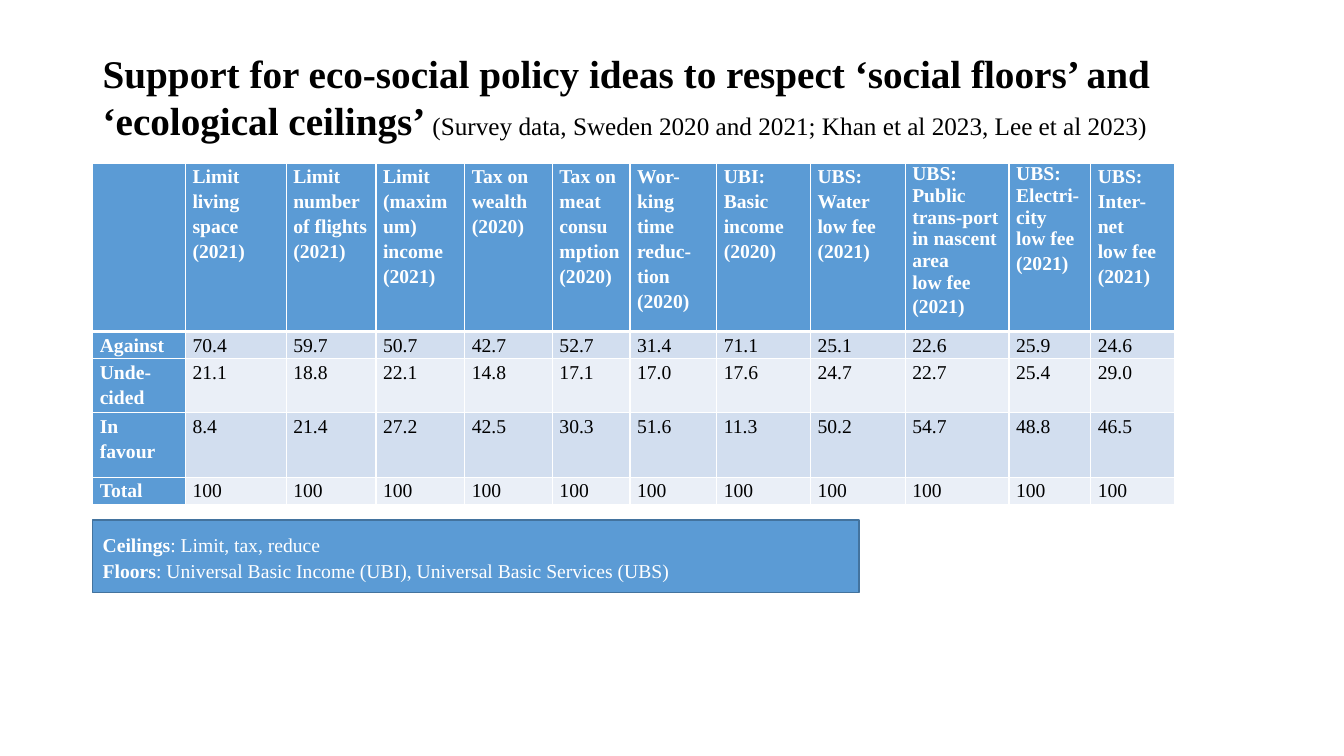
from lxml import etree
from pptx import Presentation
from pptx.dml.color import RGBColor
from pptx.enum.shapes import MSO_SHAPE
from pptx.enum.text import MSO_ANCHOR, PP_ALIGN
from pptx.oxml.ns import qn
from pptx.util import Inches, Pt

RECTANGLE = MSO_SHAPE.RECTANGLE
MIDDLE = MSO_ANCHOR.MIDDLE
LEFT = PP_ALIGN.LEFT

BLACK = RGBColor(0x00, 0x00, 0x00)
WHITE = RGBColor(0xFF, 0xFF, 0xFF)
BLUE = RGBColor(0x5B, 0x9B, 0xD5)
DARK_BLUE = RGBColor(0x43, 0x73, 0x9E)
BANDS = [RGBColor(0xD2, 0xDE, 0xEF), RGBColor(0xEA, 0xEF, 0xF7)]

LEFT_EDGE = 0.92
TABLE_SPACING = 1.15
COLUMN_WIDTHS = [0.92, 1, 0.89, 0.88, 0.87, 0.77, 0.86, 0.93, 0.94, 1.03, 0.81, 0.83]
ROW_HEIGHTS = [1.53, 0.25, 0.49, 0.64, 0.25]

# Each policy is a list of (paragraph, line spacing).
POLICIES = [[(name, TABLE_SPACING)] for name in (
    "Limit living space (2021)",
    "Limit number of flights (2021)",
    "Limit (maximum) income (2021)",
    "Tax on wealth (2020)",
    "Tax on meat consumption(2020)",
    "Wor-king time reduc-tion (2020)",
    "UBI: Basic income (2020)",
    "UBS: Water low fee (2021)",
)] + [
    [(name, 1.0), ("low fee", 1.0), ("(2021)", TABLE_SPACING)]
    for name in ("UBS: Public trans-port in nascent area", "UBS: Electri-city")
] + [
    [(line, TABLE_SPACING) for line in ("UBS:", "Inter-net", "low fee", "(2021)")]
]

ANSWERS = {
    "Against": [70.4, 59.7, 50.7, 42.7, 52.7, 31.4, 71.1, 25.1, 22.6, 25.9, 24.6],
    "Unde-cided": [21.1, 18.8, 22.1, 14.8, 17.1, 17.0, 17.6, 24.7, 22.7, 25.4, 29.0],
    "In favour": [8.4, 21.4, 27.2, 42.5, 30.3, 51.6, 11.3, 50.2, 54.7, 48.8, 46.5],
    "Total": [100] * len(POLICIES),
}


class SlideBuilder:
    font_name = "Times New Roman"

    def __init__(self, presentation):
        self.slide = presentation.slides.add_slide(presentation.slide_layouts[6])

    def fill_frame(self, frame, paragraphs, color):
        """Fill a frame with (runs, line spacing) pairs; a run is (text, size, bold)."""
        for index, (runs, spacing) in enumerate(paragraphs):
            paragraph = frame.paragraphs[0] if index == 0 else frame.add_paragraph()
            paragraph.alignment = LEFT
            paragraph.line_spacing = spacing
            for text, size, bold in runs:
                run = paragraph.add_run()
                run.text = text
                run.font.color.rgb = color
                font_format = {"name": self.font_name, "size": Pt(size), "bold": bold}
                for name, value in font_format.items():
                    setattr(run.font, name, value)

    def text(self, position, paragraphs, color, bottom_margin=0.05):
        box = self.slide.shapes.add_textbox(*map(Inches, position))
        frame_format = {"word_wrap": True, "vertical_anchor": MIDDLE,
                        "margin_bottom": Inches(bottom_margin)}
        for name, value in frame_format.items():
            setattr(box.text_frame, name, value)
        self.fill_frame(box.text_frame, paragraphs, color)

    def panel(self, position, paragraphs):
        shape = self.slide.shapes.add_shape(RECTANGLE, *map(Inches, position))
        shape.shadow.inherit = False
        shape.fill.solid()
        shape.fill.fore_color.rgb = BLUE
        shape.line.color.rgb = DARK_BLUE
        shape.line.width = Pt(1)
        shape.text_frame.word_wrap = True
        shape.text_frame.vertical_anchor = MIDDLE
        self.fill_frame(shape.text_frame, paragraphs, WHITE)

    def borders(self, cell, widths):
        """Draw white cell borders from a dict of edge letter to width in points."""
        properties = cell._tc.get_or_add_tcPr()
        for edge, width in widths.items():
            line = etree.SubElement(properties, qn(f"a:ln{edge}"), w=str(Pt(width)))
            fill = etree.SubElement(line, qn("a:solidFill"))
            etree.SubElement(fill, qn("a:srgbClr"), val=str(WHITE))

    def cell(self, cell, lines, fill, color, bold, edges):
        self.borders(cell, edges)
        cell.fill.solid()
        cell.fill.fore_color.rgb = fill
        margins = {"margin_left": 0.07, "margin_right": 0.07,
                   "margin_top": 0, "margin_bottom": 0}
        for name, value in margins.items():
            setattr(cell, name, Inches(value))
        paragraphs = [([(text, 14, bold)], spacing) for text, spacing in lines]
        self.fill_frame(cell.text_frame, paragraphs, color)

    def table(self, left, top, rows):
        """Add a table whose first row and first column are headings."""
        size = sum(COLUMN_WIDTHS), sum(ROW_HEIGHTS)
        table = self.slide.shapes.add_table(
            len(rows), len(COLUMN_WIDTHS), *map(Inches, (left, top, *size))).table
        for column, width in zip(table.columns, COLUMN_WIDTHS):
            column.width = Inches(width)
        for row, height in zip(table.rows, ROW_HEIGHTS):
            row.height = Inches(height)
        for row_index, row in enumerate(rows):
            edges = {"L": 1, "R": 1, "T": 3 if row_index == 1 else 1,
                     "B": 3 if row_index == 0 else 1}
            for column_index, lines in enumerate(row):
                heading = row_index == 0 or column_index == 0
                fill = BLUE if heading else BANDS[(row_index - 1) % 2]
                self.cell(table.cell(row_index, column_index), lines, fill,
                          WHITE if heading else BLACK, heading, edges)


def main():
    presentation = Presentation()
    presentation.slide_width = Inches(13.33)
    presentation.slide_height = Inches(7.5)
    builder = SlideBuilder(presentation)

    title = [
        ("Support for eco-social policy ideas to respect ‘social floors’ and "
         "‘ecological ceilings’ ", 28, True),
        ("(Survey data, Sweden 2020 and 2021; Khan et al 2023, Lee et al 2023)", 18, False),
    ]
    builder.text((LEFT_EDGE, 0.4, 11.5, 1.45), [(title, 0.99)], BLACK, bottom_margin=0.36)

    rows = [[[]] + POLICIES]
    for answer, shares in ANSWERS.items():
        rows.append([[(str(entry), TABLE_SPACING)] for entry in (answer, *shares)])
    builder.table(LEFT_EDGE, 1.62, rows)

    legend = {
        "Ceilings": ": Limit, tax, reduce",
        "Floors": ": Universal Basic Income (UBI), Universal Basic Services (UBS)",
    }
    builder.panel((LEFT_EDGE, 5.16, 7.6, 0.72),
                  [([(term, 14, True), (meaning, 14, False)], 1.1)
                   for term, meaning in legend.items()])

    presentation.save("out.pptx")


if __name__ == "__main__":
    main()
